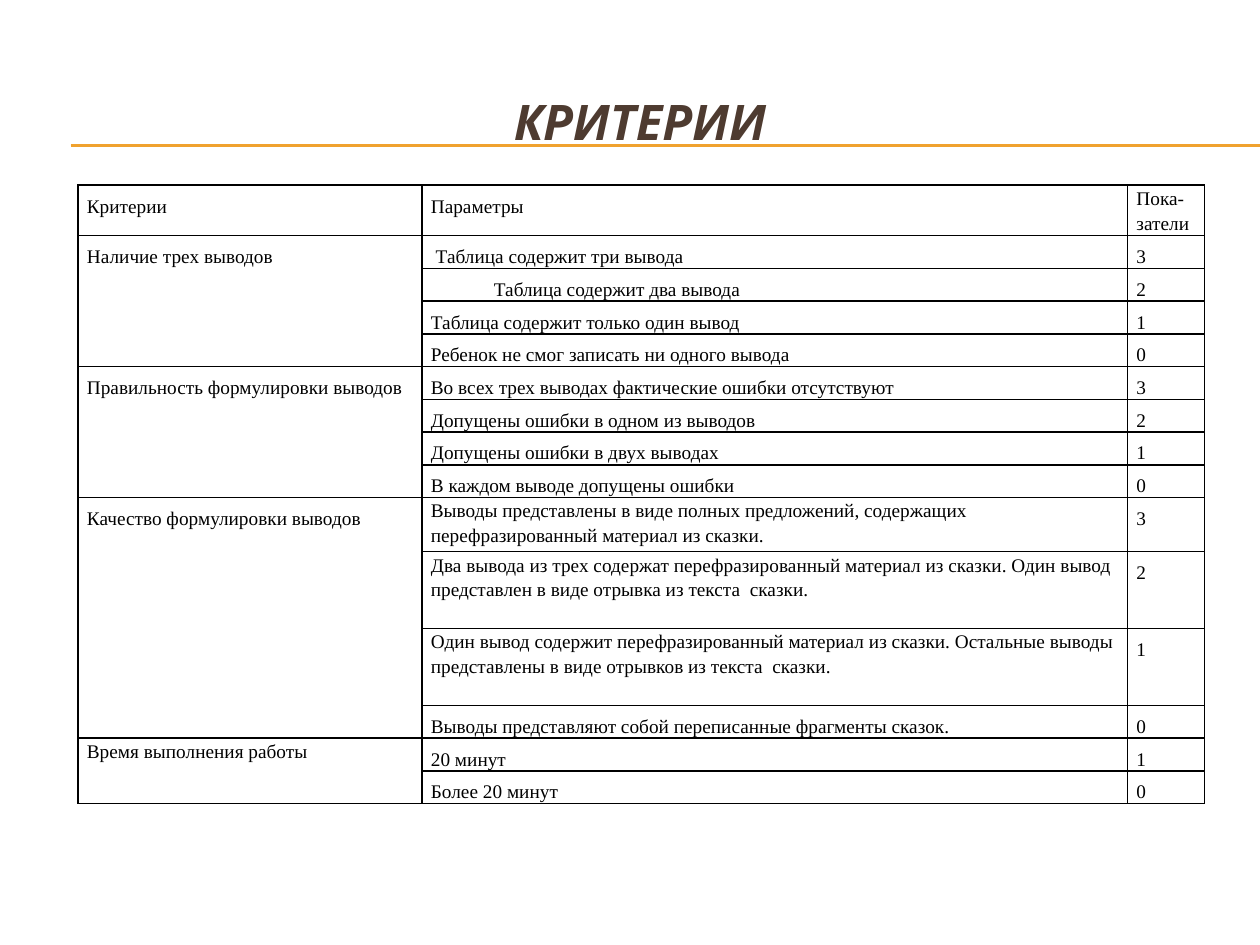
import pptx
import pptx.util
import pptx.dml.color
import pptx.enum.shapes
import pptx.enum.text
import pptx.oxml
import pptx.oxml.ns
from pptx.util import Inches

BLACK = pptx.dml.color.RGBColor(0x00, 0x00, 0x00)
BROWN = pptx.dml.color.RGBColor(0x4E, 0x3B, 0x30)
GOLD = pptx.dml.color.RGBColor(0xF0, 0xA2, 0x2E)
LEFT = pptx.enum.text.PP_ALIGN.LEFT
JUST = pptx.enum.text.PP_ALIGN.JUSTIFY
NS = pptx.oxml.ns.nsdecls("a")

HEAD = ["Критерии ", "Параметры ", "Пока-затели "]
# Each group: name, alignment, line spacing, then (parameter, alignment, spacing)
GROUPS = [
    ("Наличие трех выводов", LEFT, 1.5, [
        (" Таблица содержит три вывода", LEFT, 1.5),
        ("Таблица содержит два вывода", LEFT, 1.5),
        ("Таблица содержит только один вывод", LEFT, 1.5),
        ("Ребенок не смог записать ни одного вывода", LEFT, 1.5)]),
    ("Правильность формулировки выводов", LEFT, 1.5, [
        ("Во всех трех выводах фактические ошибки отсутствуют", LEFT, 1.5),
        ("Допущены ошибки в одном из выводов", LEFT, 1.5),
        ("Допущены ошибки в двух выводах", LEFT, 1.5),
        ("В каждом выводе допущены ошибки", LEFT, 1.5)]),
    ("Качество формулировки выводов", LEFT, 1.5, [
        ("Выводы представлены в виде полных предложений, содержащих "
         "перефразированный материал из сказки.", LEFT, 1.15),
        ("Два вывода из трех содержат перефразированный материал из сказки. "
         "Один вывод представлен в виде отрывка из текста  сказки.", LEFT, 1.15),
        ("Один вывод содержит перефразированный материал из сказки. "
         "Остальные выводы представлены в виде отрывков из текста  сказки.",
         LEFT, 1.15),
        ("Выводы представляют собой переписанные фрагменты сказок.", JUST, 1.5)]),
    ("Время выполнения работы", JUST, 1.15, [
        ("20 минут", JUST, 1.5),
        ("Более 20 минут", JUST, 1.5)]),
]
COLS = [2.73, 5.6, 0.61]
ROWS = [0.4] + [0.26] * 8 + [0.43, 0.61, 0.61] + [0.26] * 3


def write(cell, text, align, space):
    para = cell.text_frame.paragraphs[0]
    para.text = text
    para.alignment = align
    para.line_spacing = space
    para.font.name = "Times New Roman"
    para.font.size = pptx.util.Pt(11)
    para.font.color.rgb = BLACK
    return para


prs = pptx.Presentation()
prs.slide_width = Inches(10)
prs.slide_height = Inches(7.5)
slide = prs.slides.add_slide(prs.slide_layouts[5])

# Rules under the title
for y in (1.15, 1.16):
    rule = slide.shapes.add_connector(
        pptx.enum.shapes.MSO_CONNECTOR.STRAIGHT,
        Inches(0.56), Inches(y), Inches(10), Inches(y))
    rule.line.color.rgb = GOLD
    rule.line.width = pptx.util.Pt(0.75)
    rule._element.spPr.append(pptx.oxml.parse_xml(f"<a:effectLst {NS}/>"))

# Title
title = slide.shapes.title
title.left, title.top = Inches(0.33), Inches(0.5)
title.width, title.height = Inches(9.5), Inches(0.92)
title.text_frame.text = "КРИТЕРИИ"
title.text_frame.vertical_anchor = pptx.enum.text.MSO_ANCHOR.MIDDLE
para = title.text_frame.paragraphs[0]
para.alignment = pptx.enum.text.PP_ALIGN.CENTER
para.font.name = "Karla"
para.font.size = pptx.util.Pt(28)
para.font.bold = para.font.italic = True
para.font.color.rgb = BROWN

# Table grid
table = slide.shapes.add_table(
    len(ROWS), len(COLS), Inches(0.62), Inches(1.47),
    Inches(sum(COLS)), Inches(sum(ROWS))).table
for col, width in zip(table.columns, COLS):
    col.width = Inches(width)
for row, height in zip(table.rows, ROWS):
    row.height = Inches(height)
    for cell in row.cells:
        cell.margin_left = cell.margin_right = Inches(0.07)
        cell.margin_top = cell.margin_bottom = 0
        props = cell._tc.get_or_add_tcPr()
        for side in "LRTB":
            props.append(pptx.oxml.parse_xml(
                f'<a:ln{side} {NS} w="12700"><a:solidFill>'
                f'<a:srgbClr val="{BLACK}"/></a:solidFill></a:ln{side}>'))
        cell.fill.background()

# Table text
for col, (text, space) in enumerate(zip(HEAD, (1.5, 1.5, 1.15))):
    write(table.cell(0, col), text, JUST, space)
top = 1
for name, align, space, params in GROUPS:
    count = len(params)
    table.cell(top, 0).merge(table.cell(top + count - 1, 0))
    write(table.cell(top, 0), name, align, space)
    for step, param in enumerate(params):
        write(table.cell(top + step, 1), *param)
        write(table.cell(top + step, 2), str(count - 1 - step), JUST, 1.5)
    top += count

# The second parameter is indented
inset = table.cell(2, 1).text_frame.paragraphs[0]._p.get_or_add_pPr()
inset.set("marL", str(Inches(0.5)))

prs.save("out.pptx")
